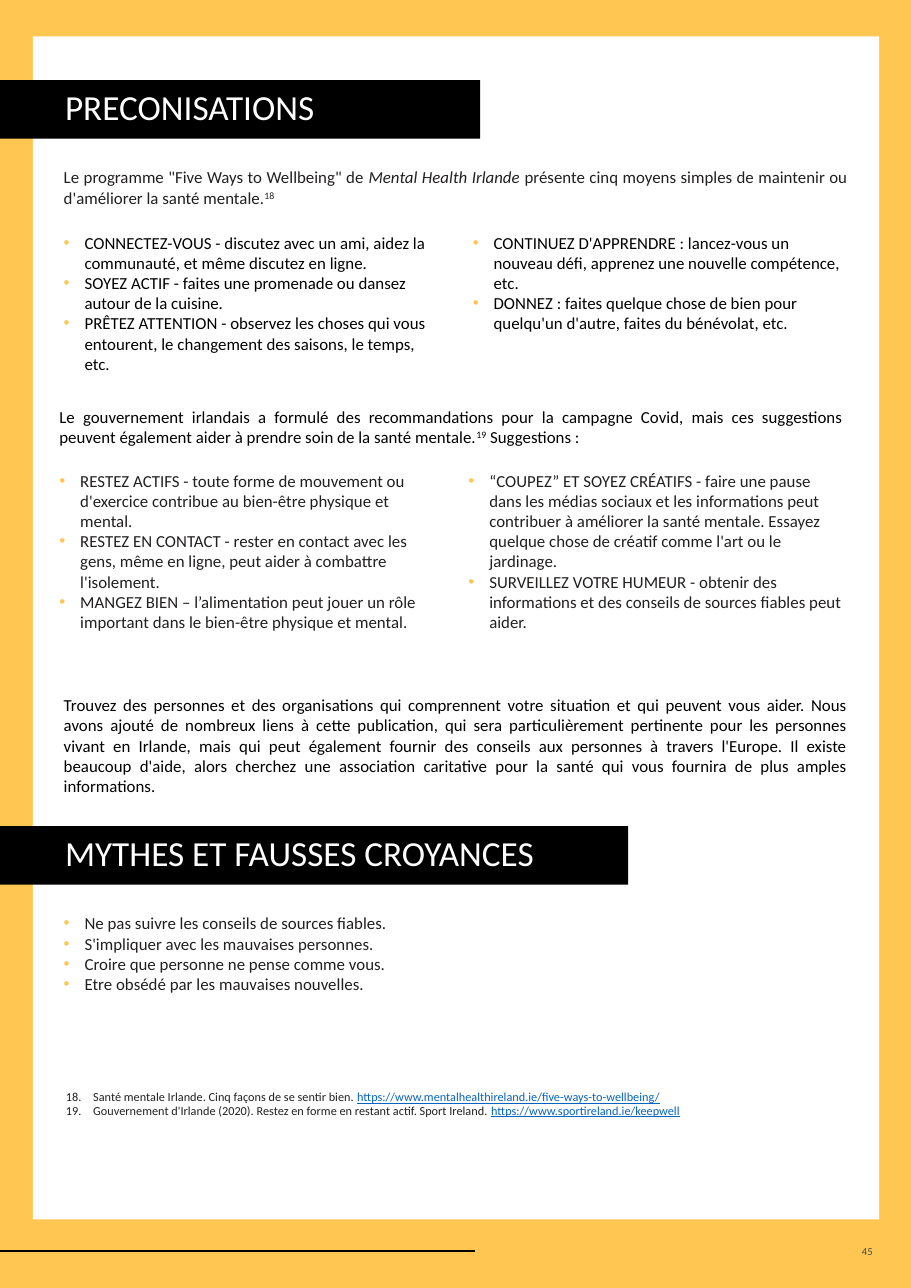
from dataclasses import dataclass

import pptx
import pptx.dml.color
import pptx.enum.shapes
import pptx.enum.text
import pptx.oxml
import pptx.oxml.ns
import pptx.util
from pptx.util import Cm

ITALIC = {"italic": True}
SUPERSCRIPT = {"superscript": True}
LINK = {"link": True}

# Each paragraph is a string or a list of (text, style) runs.
PROGRAMME = [[
    ('Le programme "Five Ways to Wellbeing" de ', {}),
    ("Mental Health Irlande ", ITALIC),
    ("présente cinq moyens simples de maintenir ou d'améliorer la santé mentale.", {}),
    ("18", SUPERSCRIPT),
]]
FIVE_WAYS = (
    ["CONNECTEZ-VOUS - discutez avec un ami, aidez la communauté, et même discutez en ligne.",
     "SOYEZ ACTIF - faites une promenade ou dansez autour de la cuisine.",
     "PRÊTEZ ATTENTION - observez les choses qui vous entourent, le changement des saisons, "
     "le temps, etc."],
    ["CONTINUEZ D'APPRENDRE : lancez-vous un nouveau défi, apprenez une nouvelle compétence, etc.",
     "DONNEZ : faites quelque chose de bien pour quelqu'un d'autre, faites du bénévolat, etc."],
)
GOVERNMENT = [[
    ("Le gouvernement irlandais a formulé des recommandations pour la campagne Covid, mais ces "
     "suggestions peuvent également aider à prendre soin de la santé mentale.", {}),
    ("19", SUPERSCRIPT),
    (" Suggestions :", {}),
]]
SUGGESTIONS = (
    ["RESTEZ ACTIFS - toute forme de mouvement ou d'exercice contribue au bien-être physique "
     "et mental.",
     "RESTEZ EN CONTACT - rester en contact avec les gens, même en ligne, peut aider à combattre "
     "l'isolement.",
     "MANGEZ BIEN – l’alimentation peut jouer un rôle important dans le bien-être physique "
     "et mental."],
    ["“COUPEZ” ET SOYEZ CRÉATIFS - faire une pause dans les médias sociaux et les informations "
     "peut contribuer à améliorer la santé mentale. Essayez quelque chose de créatif comme l'art "
     "ou le jardinage.",
     "SURVEILLEZ VOTRE HUMEUR - obtenir des informations et des conseils de sources fiables "
     "peut aider."],
)
FIND_HELP = [
    "Trouvez des personnes et des organisations qui comprennent votre situation et qui peuvent "
    "vous aider. Nous avons ajouté de nombreux liens à cette publication, qui sera "
    "particulièrement pertinente pour les personnes vivant en Irlande, mais qui peut également "
    "fournir des conseils aux personnes à travers l'Europe. Il existe beaucoup d'aide, alors "
    "cherchez une association caritative pour la santé qui vous fournira de plus amples "
    "informations.",
]
MYTHS = [
    "Ne pas suivre les conseils de sources fiables.",
    "S'impliquer avec les mauvaises personnes.",
    "Croire que personne ne pense comme vous.",
    "Etre obsédé par les mauvaises nouvelles.",
]
FOOTNOTES = [
    [("Santé mentale Irlande. Cinq façons de se sentir bien. ", {}),
     ("https://www.mentalhealthireland.ie/five-ways-to-wellbeing/", LINK)],
    [("Gouvernement d'Irlande (2020). Restez en forme en restant actif. Sport Ireland. ", {}),
     ("https://www.sportireland.ie/keepwell", LINK)],
]
FIRST_FOOTNOTE = 18


@dataclass(frozen=True)
class Theme:
    font: str = "Calibri"
    yellow: str = "FFC652"
    white: str = "FFFFFF"
    black: str = "000000"
    ink: str = "221F1F"
    grey: str = "4B4B4B"
    link: str = "0563C1"
    heading: float = 23
    body: float = 11
    note: float = 8
    page: float = 7


THEME = Theme()
ALIGN = pptx.enum.text.PP_ALIGN
MIDDLE = pptx.enum.text.MSO_ANCHOR.MIDDLE

BODY_LEFT, BODY_WIDTH = 1.22, 18.57
SHIFTED_LEFT = 1.12
INSET, COLUMN_GAP = 0.25, 0.79
BAND_HEIGHT = 1.35

presentation = pptx.Presentation()
presentation.slide_width, presentation.slide_height = Cm(21), Cm(29.7)
slide = presentation.slides.add_slide(presentation.slide_layouts[5])


def rgb(value):
    return pptx.dml.color.RGBColor.from_string(value)


def add_marker(paragraph, marker, indent):
    """Hang the paragraph on a yellow bullet, or on a number if marker is an integer."""
    properties = paragraph._p.get_or_add_pPr()
    properties.set("marL", str(Cm(indent)))
    properties.set("indent", str(-Cm(indent)))
    if isinstance(marker, int):
        items = [f'<a:buAutoNum {{}} type="arabicPeriod" startAt="{marker}"/>']
    else:
        items = [f'<a:buClr {{}}><a:srgbClr val="{THEME.yellow}"/></a:buClr>',
                 '<a:buFont {} typeface="Arial"/>',
                 f'<a:buChar {{}} char="{marker}"/>']
    for item in items:
        properties.append(pptx.oxml.parse_xml(item.format(pptx.oxml.ns.nsdecls("a"))))


def write(shape, paragraphs, size=THEME.body, color=THEME.ink, align=ALIGN.LEFT,
          marker=None, indent=0.48, line_spacing=None, anchor=pptx.enum.text.MSO_ANCHOR.TOP):
    frame = shape.text_frame
    frame.word_wrap = True
    frame.auto_size = pptx.enum.text.MSO_AUTO_SIZE.NONE
    frame.vertical_anchor = anchor
    for index, content in enumerate(paragraphs):
        paragraph = frame.add_paragraph() if index else frame.paragraphs[0]
        paragraph.alignment = align
        if line_spacing:
            paragraph.line_spacing = line_spacing
        if marker:
            add_marker(paragraph, marker, indent)
        for text, style in [(content, {})] if isinstance(content, str) else content:
            run = paragraph.add_run()
            run.text = text
            run.font.name, run.font.size = THEME.font, pptx.util.Pt(size)
            run.font.color.rgb = rgb(THEME.link if style.get("link") else color)
            run.font.underline = style.get("link")
            run.font.italic = style.get("italic")
            if style.get("superscript"):
                run._r.get_or_add_rPr().set("baseline", "30000")


def add_text(left, top, width, height, paragraphs, **text_format):
    box = slide.shapes.add_textbox(Cm(left), Cm(top), Cm(width), Cm(height))
    write(box, paragraphs, **text_format)
    return box


def add_columns(left, top, height, columns, **text_format):
    width = (BODY_WIDTH - 2 * INSET - COLUMN_GAP) / 2
    for index, paragraphs in enumerate(columns):
        add_text(left + index * (width + COLUMN_GAP), top, width + 2 * INSET, height,
                 paragraphs, marker="•", **text_format)


def add_rectangle(left, top, width, height):
    shape = slide.shapes.add_shape(pptx.enum.shapes.MSO_SHAPE.RECTANGLE,
                                   Cm(left), Cm(top), Cm(width), Cm(height))
    shape.shadow.inherit = False
    shape.line.fill.background()
    shape.fill.solid()
    shape.fill.fore_color.rgb = rgb(THEME.white)
    return shape


def format_heading(shape, text):
    shape.fill.solid()
    shape.fill.fore_color.rgb = rgb(THEME.black)
    shape.text_frame.margin_left = Cm(1.5)
    write(shape, [text], size=THEME.heading, color=THEME.white, line_spacing=0.9, anchor=MIDDLE)


slide.background.fill.solid()
slide.background.fill.fore_color.rgb = rgb(THEME.yellow)
add_rectangle(0.76, 0.84, 19.51, 27.28)

footer_line = slide.shapes.add_connector(pptx.enum.shapes.MSO_CONNECTOR.STRAIGHT,
                                         Cm(0), Cm(28.85), Cm(10.95), Cm(28.85))
footer_line.line.color.rgb = rgb(THEME.black)
footer_line.line.width = pptx.util.Pt(1.5)
footer_line._element.spPr.append(
    pptx.oxml.parse_xml(f'<a:effectLst {pptx.oxml.ns.nsdecls("a")}/>'))

page_number = add_text(17.63, 28.65, 2.74, 0.41, ["45"], size=THEME.page, color=THEME.grey,
                       align=ALIGN.RIGHT, anchor=MIDDLE)
page_number.text_frame.margin_top = page_number.text_frame.margin_bottom = 0

title = slide.shapes.title
title.left, title.top, title.width, title.height = Cm(0), Cm(1.85), Cm(11.07), Cm(BAND_HEIGHT)
title.element.getparent().append(title.element)  # bring above the white panel
format_heading(title, "PRECONISATIONS")

add_text(BODY_LEFT, 3.73, BODY_WIDTH, 1.4, PROGRAMME, align=ALIGN.JUSTIFY)
add_columns(BODY_LEFT, 5.23, 3.53, FIVE_WAYS, color=THEME.black)
add_text(SHIFTED_LEFT, 9.25, BODY_WIDTH, 1.4, GOVERNMENT, color=THEME.black, align=ALIGN.JUSTIFY)
add_columns(SHIFTED_LEFT, 10.72, 4.47, SUGGESTIONS)
add_text(BODY_LEFT, 15.9, BODY_WIDTH, 2.6, FIND_HELP, color=THEME.black, align=ALIGN.JUSTIFY)

format_heading(add_rectangle(0, 19.05, 14.48, BAND_HEIGHT), "MYTHES ET FAUSSES CROYANCES")
add_text(BODY_LEFT, 20.93, BODY_WIDTH, 2.21, MYTHS, align=ALIGN.JUSTIFY, marker="•")
add_text(1.27, 25.04, 18.42, 2.31, FOOTNOTES, size=THEME.note, marker=FIRST_FOOTNOTE,
         indent=0.63, line_spacing=0.9)

presentation.save("out.pptx")
